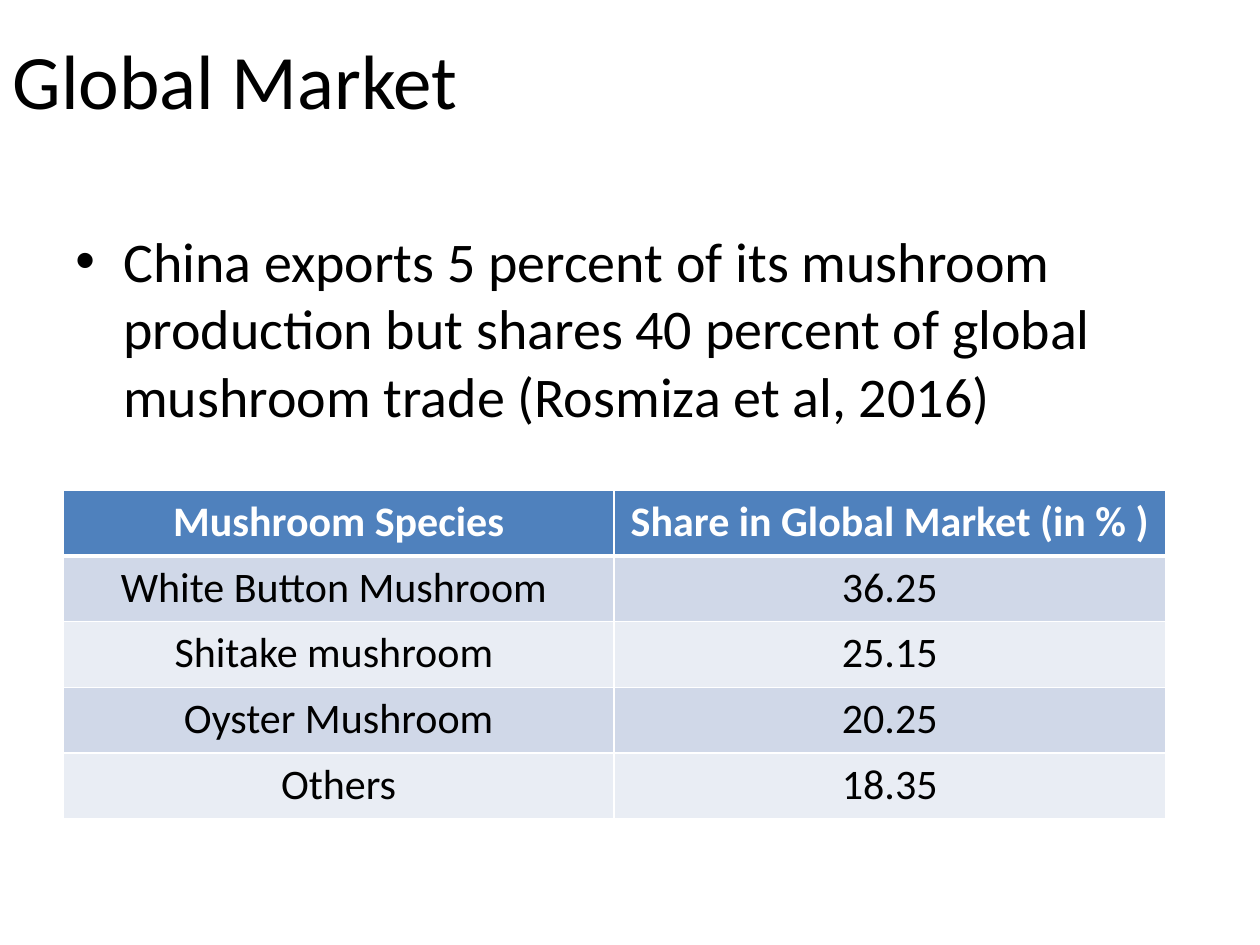
from lxml.etree import SubElement
from pptx import Presentation
from pptx.dml.color import RGBColor
from pptx.enum.text import MSO_ANCHOR as Anchor, PP_ALIGN as Align
from pptx.oxml.ns import qn
from pptx.util import Inches, Pt

# Content
TITLE = "Global Market"
BULLET = ("China exports 5 percent of its mushroom production but shares "
          "40 percent of global mushroom trade (Rosmiza et al, 2016)")
ROWS = [
    ("Mushroom Species", "Share in Global Market (in % )"),
    ("White Button Mushroom ", "36.25"),
    ("Shitake mushroom ", "25.15"),
    ("Oyster Mushroom", "20.25"),
    ("Others", "18.35"),
]
FONT = "Calibri"
BLACK, WHITE = "000000", "FFFFFF"
HEADER_FILL, BAND_FILLS = "4F81BD", ("E9EDF4", "D0D8E8")


def color(value):
    return RGBColor.from_string(value)


def write(frame, text, size, fill=BLACK, bold=False, align=Align.LEFT):
    para = frame.paragraphs[0]
    para.alignment = align
    span = para.add_run()
    span.text = text
    font = span.font
    font.name, font.size, font.bold = FONT, Pt(size), bold
    font.color.rgb = color(fill)
    return para


def add_bullet(para, indent):
    props = para._p.get_or_add_pPr()
    props.set("marL", str(indent))
    props.set("indent", str(-indent))
    SubElement(props, qn("a:buFont"), typeface="Arial")
    SubElement(props, qn("a:buChar"), char="•")


def add_border(cell, side, width):
    line = SubElement(cell._tc.get_or_add_tcPr(), qn(f"a:ln{side}"), w=str(Pt(width)))
    SubElement(SubElement(line, qn("a:solidFill")), qn("a:srgbClr"), val=WHITE)


deck = Presentation()
deck.slide_width, deck.slide_height = Inches(10), Inches(7.5)
slide = deck.slides.add_slide(deck.slide_layouts[5])

# Title
title = slide.shapes.title
title.left, title.top = Inches(0), Inches(0)
title.width, title.height = Inches(9), Inches(1.25)
title.text_frame.vertical_anchor = Anchor.MIDDLE
write(title.text_frame, TITLE, 44)

# Bullet text
box = slide.shapes.add_textbox(Inches(0.5), Inches(1.75), Inches(9), Inches(1.83))
box.text_frame.word_wrap = True
bullet = write(box.text_frame, BULLET, 32)
bullet.space_before = Pt(6.4)
add_bullet(bullet, Inches(0.38))

# Market share table
table = slide.shapes.add_table(len(ROWS), len(ROWS[0]), Inches(0.5), Inches(3.89),
                               Inches(8.75), Inches(2.61)).table
for row, values in enumerate(ROWS):
    header = row == 0
    for column, value in enumerate(values):
        cell = table.cell(row, column)
        for side in "LRTB":
            thick = (header and side == "B") or (row == 1 and side == "T")
            add_border(cell, side, 3 if thick else 1)
        cell.fill.solid()
        cell.fill.fore_color.rgb = color(HEADER_FILL if header else BAND_FILLS[row % 2])
        write(cell.text_frame, value, 24, fill=WHITE if header else BLACK,
              bold=header, align=Align.CENTER)

deck.save("out.pptx")
